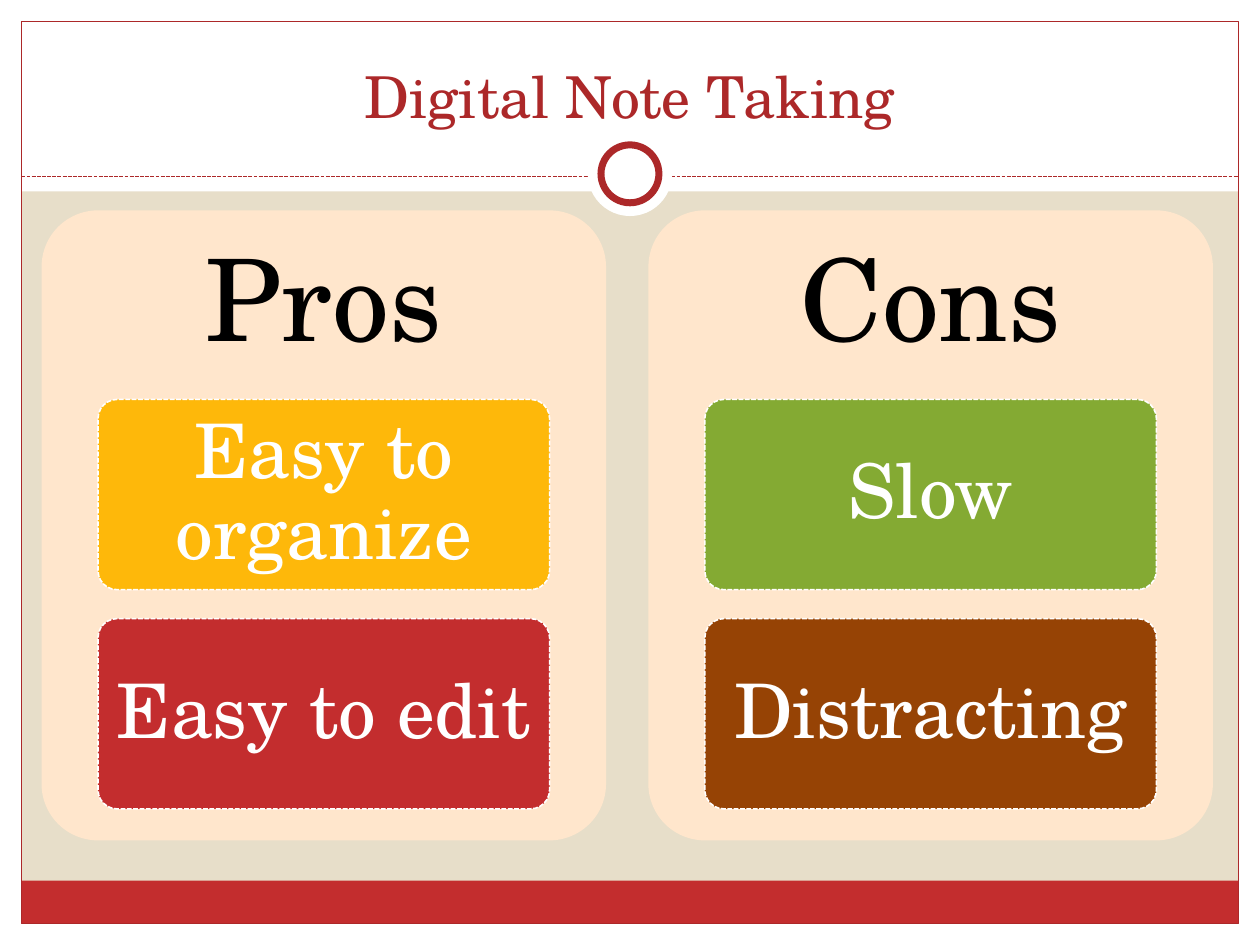
from dataclasses import dataclass

from lxml import etree
from pptx import Presentation
from pptx.dml.color import RGBColor
from pptx.enum.dml import MSO_LINE
from pptx.enum.shapes import MSO_CONNECTOR, MSO_SHAPE
from pptx.enum.text import MSO_ANCHOR, MSO_AUTO_SIZE, PP_ALIGN
from pptx.oxml.ns import qn
from pptx.util import Inches, Pt

RECT, ROUND, OVAL = MSO_SHAPE.RECTANGLE, MSO_SHAPE.ROUNDED_RECTANGLE, MSO_SHAPE.OVAL
DASH = MSO_LINE.SQUARE_DOT
STRAIGHT = MSO_CONNECTOR.STRAIGHT
MIDDLE, BOTTOM = MSO_ANCHOR.MIDDLE, MSO_ANCHOR.BOTTOM
CENTER = PP_ALIGN.CENTER
NO_FIT = MSO_AUTO_SIZE.NONE

FONT = "TeX Gyre Schola"
SAND = RGBColor(0xE7, 0xDE, 0xC9)
WHITE = RGBColor(0xFF, 0xFF, 0xFF)
BLACK = RGBColor(0x00, 0x00, 0x00)
RED = RGBColor(0xC3, 0x2D, 0x2E)
DARK = RGBColor(0xAC, 0x28, 0x29)
PEACH = RGBColor(0xFF, 0xE6, 0xCC)
GOLD = RGBColor(0xFE, 0xB8, 0x0A)
GREEN = RGBColor(0x84, 0xAA, 0x33)
BROWN = RGBColor(0x96, 0x43, 0x05)

WIDE, HIGH = 10, 7.5
EDGE = 0.17
HEAD = 1.52      # height of the white title band
RULE = 1.4       # height of the dashed rule
HUB = 1.38       # centre height of the ring
FOOT = 0.34
LEFT, TOP = 0.33, 1.67
PANEL_W, PANEL_H = 4.48, 5
COL_STEP = PANEL_W * 1.075
CARD_W, CARD_H = PANEL_W * 0.8, 1.51
ROW_STEP = 1.74
HEAD_H = PANEL_H * 0.3


@dataclass
class Box:
    x: float
    y: float
    w: float
    h: float

    def emu(self) -> list:
        return [Inches(v) for v in (self.x, self.y, self.w, self.h)]


@dataclass
class Card:
    text: str
    color: RGBColor


@dataclass
class Panel:
    name: str
    cards: list[Card]


PANELS = [
    Panel("Pros", [Card("Easy to organize", GOLD), Card("Easy to edit", RED)]),
    Panel("Cons", [Card("Slow", GREEN), Card("Distracting", BROWN)]),
]


def add_form(slide, kind, box: Box, fill=None, line=None, width=0.75, dash=None):
    form = slide.shapes.add_shape(kind, *box.emu())
    form.shadow.inherit = False
    if fill is None:
        form.fill.background()
    else:
        form.fill.solid()
        form.fill.fore_color.rgb = fill
    if line is None:
        form.line.fill.background()
    else:
        form.line.color.rgb = line
        form.line.width = Pt(width)
        if dash:
            form.line.dash_style = dash
    if kind == ROUND:
        form.adjustments[0] = 0.1
    return form


def set_text(form, text: str, size: int, color: RGBColor, anchor=MIDDLE,
             pad=(0.1, 0.05), space=0.9) -> None:
    frame = form.text_frame
    frame.word_wrap = True
    frame.auto_size = NO_FIT
    frame.vertical_anchor = anchor
    frame.margin_left = frame.margin_right = Inches(pad[0])
    frame.margin_top = frame.margin_bottom = Inches(pad[1])
    para = frame.paragraphs[0]
    para.alignment = CENTER
    para.line_spacing = space
    run = para.add_run()
    run.text = text
    run.font.name = FONT
    run.font.size = Pt(size)
    run.font.color.rgb = color


def add_rule(slide) -> None:
    rule = slide.shapes.add_connector(
        STRAIGHT, Inches(EDGE), Inches(RULE), Inches(WIDE - EDGE), Inches(RULE))
    rule.line.color.rgb = DARK
    rule.line.width = Pt(0.75)
    rule.line.dash_style = DASH
    etree.SubElement(rule._element.spPr, qn("a:effectLst"))


def add_disc(slide, size: float, **style) -> None:
    box = Box((WIDE - size) / 2, HUB - size / 2, size, size)
    add_form(slide, OVAL, box, WHITE, **style)


def add_frame(slide) -> None:
    inner = WIDE - 2 * EDGE
    for box in (
        Box(0, HIGH - EDGE, WIDE, EDGE),
        Box(0, 0, WIDE, HEAD),
        Box(0, 0, EDGE, HIGH),
        Box(WIDE - EDGE, 0, EDGE, HIGH),
    ):
        add_form(slide, RECT, box, WHITE)
    add_form(slide, RECT, Box(EDGE, HIGH - EDGE - FOOT, inner, FOOT), RED)
    add_form(slide, RECT, Box(EDGE, EDGE, inner, HIGH - 2 * EDGE), line=DARK)
    add_rule(slide)
    add_disc(slide, 0.67)
    add_disc(slide, 0.46, line=DARK, width=4)


def add_title(slide, text: str) -> None:
    title = slide.shapes.title
    box = Box(LEFT, 0.25, WIDE - 2 * LEFT, 0.83)
    title.left, title.top, title.width, title.height = box.emu()
    set_text(title, text, 33, DARK, BOTTOM, space=1.0)
    # Lift the title above the white band
    slide.shapes._spTree.append(title._element)


def add_panel(slide, panel: Panel, col: int) -> None:
    x = LEFT + col * COL_STEP
    add_form(slide, ROUND, Box(x, TOP, PANEL_W, PANEL_H), PEACH)
    head = slide.shapes.add_textbox(*Box(x, TOP, PANEL_W, HEAD_H).emu())
    set_text(head, panel.name, 65, BLACK, pad=(0.27, 0.27))
    for row, card in enumerate(panel.cards):
        box = Box(x + (PANEL_W - CARD_W) / 2, TOP + HEAD_H + row * ROW_STEP,
                  CARD_W, CARD_H)
        form = add_form(slide, ROUND, box, card.color, WHITE, 0.9, DASH)
        set_text(form, card.text, 43, WHITE, pad=(0.07, 0.05))


def main() -> None:
    deck = Presentation()
    deck.slide_width, deck.slide_height = Inches(WIDE), Inches(HIGH)
    slide = deck.slides.add_slide(deck.slide_layouts[5])
    slide.background.fill.solid()
    slide.background.fill.fore_color.rgb = SAND
    add_frame(slide)
    add_title(slide, "Digital Note Taking")
    for col, panel in enumerate(PANELS):
        add_panel(slide, panel, col)
    deck.save("out.pptx")


if __name__ == "__main__":
    main()
